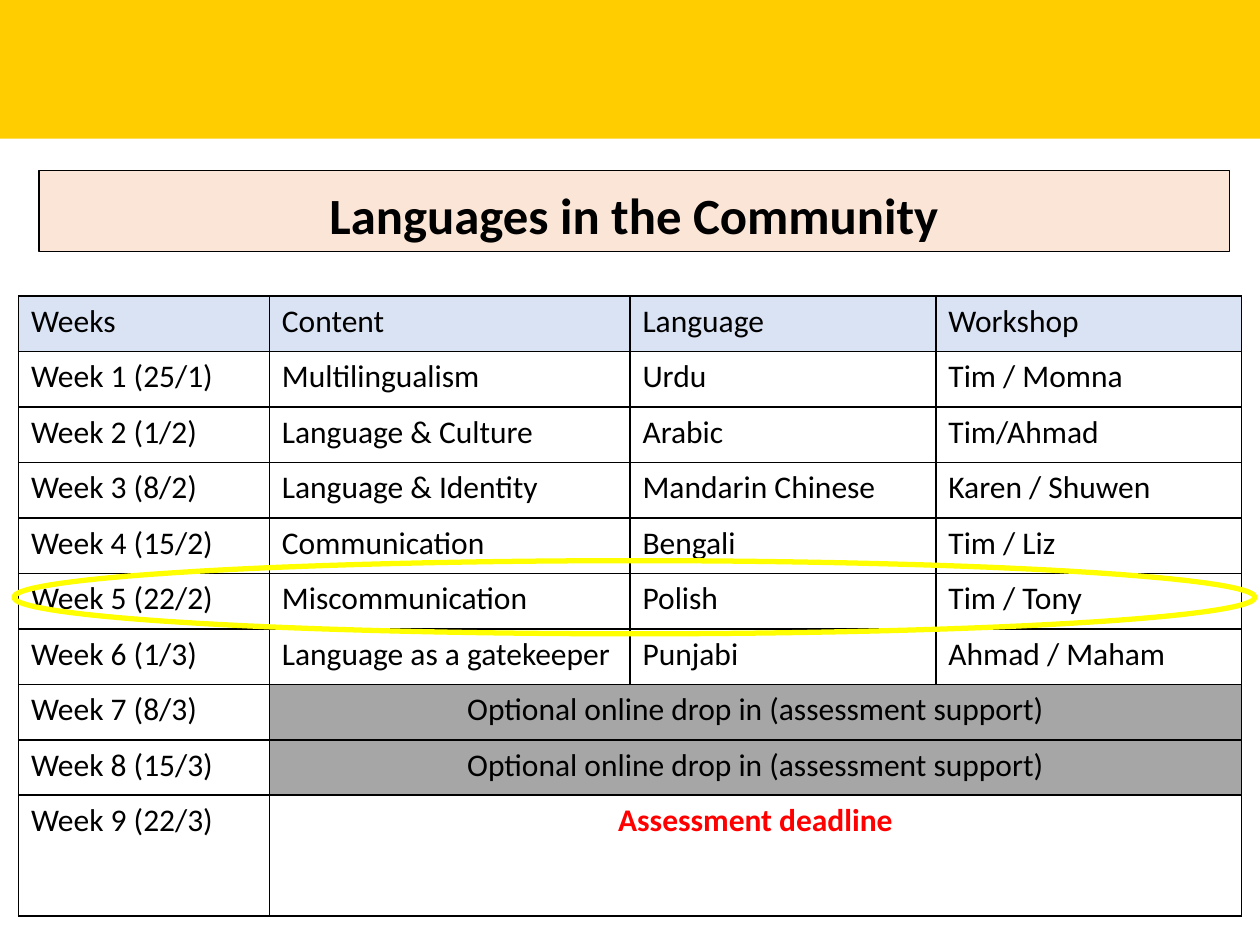
import dataclasses
import typing

import pptx
import pptx.dml.color
import pptx.enum.shapes
import pptx.enum.text
import pptx.oxml
import pptx.oxml.ns
import pptx.util

Pt = pptx.util.Pt
SHAPES = pptx.enum.shapes.MSO_SHAPE
ALIGN = pptx.enum.text.PP_ALIGN


@dataclasses.dataclass(frozen=True)
class Theme:
    font: str = "Calibri"
    title_size: float = 29
    body_size: float = 18
    text: str = "000000"
    banner: str = "FFCD00"
    title_fill: str = "FBE5D6"
    header_fill: str = "DAE3F3"
    support_fill: str = "A6A6A6"
    deadline: str = "FF0000"
    highlight: str = "FFFF00"


@dataclasses.dataclass(frozen=True)
class Area:
    left: float
    top: float
    width: float
    height: float

    def lengths(self) -> list[int]:
        return [Pt(value) for value in dataclasses.astuple(self)]


@dataclasses.dataclass(frozen=True)
class Week:
    texts: tuple[str, ...]
    fill: typing.Optional[str] = None
    color: str = "000000"
    bold: bool = False


THEME = Theme()
COLUMN_WIDTHS = (143.3, 206.1, 174.8, 174.8)
ROW_HEIGHT = 31.7
LAST_ROW_HEIGHT = 69
SUPPORT = "Optional online drop in (assessment support)"
WEEKS = (
    Week(("Weeks", "Content", "Language", "Workshop"), THEME.header_fill),
    Week(("Week 1 (25/1)", "Multilingualism", "Urdu", "Tim / Momna")),
    Week(("Week 2 (1/2)", "Language & Culture", "Arabic", "Tim/Ahmad")),
    Week(("Week 3 (8/2)", "Language & Identity", "Mandarin Chinese", "Karen / Shuwen")),
    Week(("Week 4 (15/2)", "Communication", "Bengali", "Tim / Liz")),
    Week(("Week 5 (22/2)", "Miscommunication", "Polish", "Tim / Tony")),
    Week(("Week 6 (1/3)", "Language as a gatekeeper", "Punjabi", "Ahmad / Maham")),
    Week(("Week 7 (8/3)", SUPPORT), THEME.support_fill),
    Week(("Week 8 (15/3)", SUPPORT), THEME.support_fill),
    Week(("Week 9 (22/3)", "Assessment deadline"), None, THEME.deadline, True),
)


def rgb(color: str) -> pptx.dml.color.RGBColor:
    return pptx.dml.color.RGBColor.from_string(color)


def paint(target: typing.Any, color: typing.Optional[str]) -> None:
    if color is None:
        target.fill.background()
    else:
        target.fill.solid()
        target.fill.fore_color.rgb = rgb(color)


def add_box(page: typing.Any, kind: SHAPES, area: Area, fill: typing.Optional[str],
            line: typing.Optional[str] = None, line_width: float = 0) -> typing.Any:
    box = page.shapes.add_shape(kind, *area.lengths())
    box.shadow.inherit = False
    paint(box, fill)
    if line is None:
        box.line.fill.background()
    else:
        box.line.color.rgb = rgb(line)
        box.line.width = Pt(line_width)
    return box


def write(frame: typing.Any, text: str, size: float, color: str, bold: bool, align: ALIGN) -> None:
    frame.text = text
    para = frame.paragraphs[0]
    para.alignment = align
    for span in para.runs:
        span.font.name = THEME.font
        span.font.size = Pt(size)
        span.font.bold = bold
        span.font.color.rgb = rgb(color)


def add_borders(cell: typing.Any) -> None:
    properties = cell._tc.get_or_add_tcPr()
    for position, side in enumerate(("lnL", "lnR", "lnT", "lnB")):
        border = pptx.oxml.parse_xml(
            f'<a:{side} {pptx.oxml.ns.nsdecls("a")} w="{Pt(1)}"><a:solidFill>'
            f'<a:srgbClr val="{THEME.text}"/></a:solidFill></a:{side}>')
        properties.insert(position, border)


def add_schedule(page: typing.Any, area: Area) -> None:
    table = page.shapes.add_table(len(WEEKS), len(COLUMN_WIDTHS), *area.lengths()).table
    table.first_row = False
    table.horz_banding = False
    for column, width in zip(table.columns, COLUMN_WIDTHS):
        column.width = Pt(width)
    last_column = len(COLUMN_WIDTHS) - 1
    for index, week in enumerate(WEEKS):
        table.rows[index].height = Pt(LAST_ROW_HEIGHT if index == len(WEEKS) - 1 else ROW_HEIGHT)
        merged = len(week.texts) == 2
        if merged:
            table.cell(index, 1).merge(table.cell(index, last_column))
        for number in range(len(COLUMN_WIDTHS)):
            cell = table.cell(index, number)
            week_label = merged and number == 0
            paint(cell, None if week_label else week.fill)
            add_borders(cell)
            if number < len(week.texts):
                write(cell.text_frame, week.texts[number], THEME.body_size,
                      THEME.text if week_label else week.color,
                      week.bold and not week_label,
                      ALIGN.CENTER if merged and number else ALIGN.LEFT)


def main() -> None:
    deck = pptx.Presentation()
    deck.slide_width, deck.slide_height = Pt(720), Pt(540)
    page = deck.slides.add_slide(deck.slide_layouts[6])
    add_box(page, SHAPES.RECTANGLE, Area(0, 0, 720, 79.2), THEME.banner)
    add_schedule(page, Area(10.6, 169.2, sum(COLUMN_WIDTHS),
                            ROW_HEIGHT * (len(WEEKS) - 1) + LAST_ROW_HEIGHT))
    title = add_box(page, SHAPES.RECTANGLE, Area(22.4, 97.3, 680.2, 46.4),
                    THEME.title_fill, THEME.text, 0.75)
    title.text_frame.word_wrap = True
    title.text_frame.vertical_anchor = pptx.enum.text.MSO_ANCHOR.BOTTOM
    write(title.text_frame, "Languages in the Community", THEME.title_size,
          THEME.text, True, ALIGN.CENTER)
    title.text_frame.paragraphs[0].line_spacing = 0.9
    add_box(page, SHAPES.OVAL, Area(7.9, 320.4, 709.2, 41.8), None, THEME.highlight, 3)
    deck.save("out.pptx")


if __name__ == "__main__":
    main()
